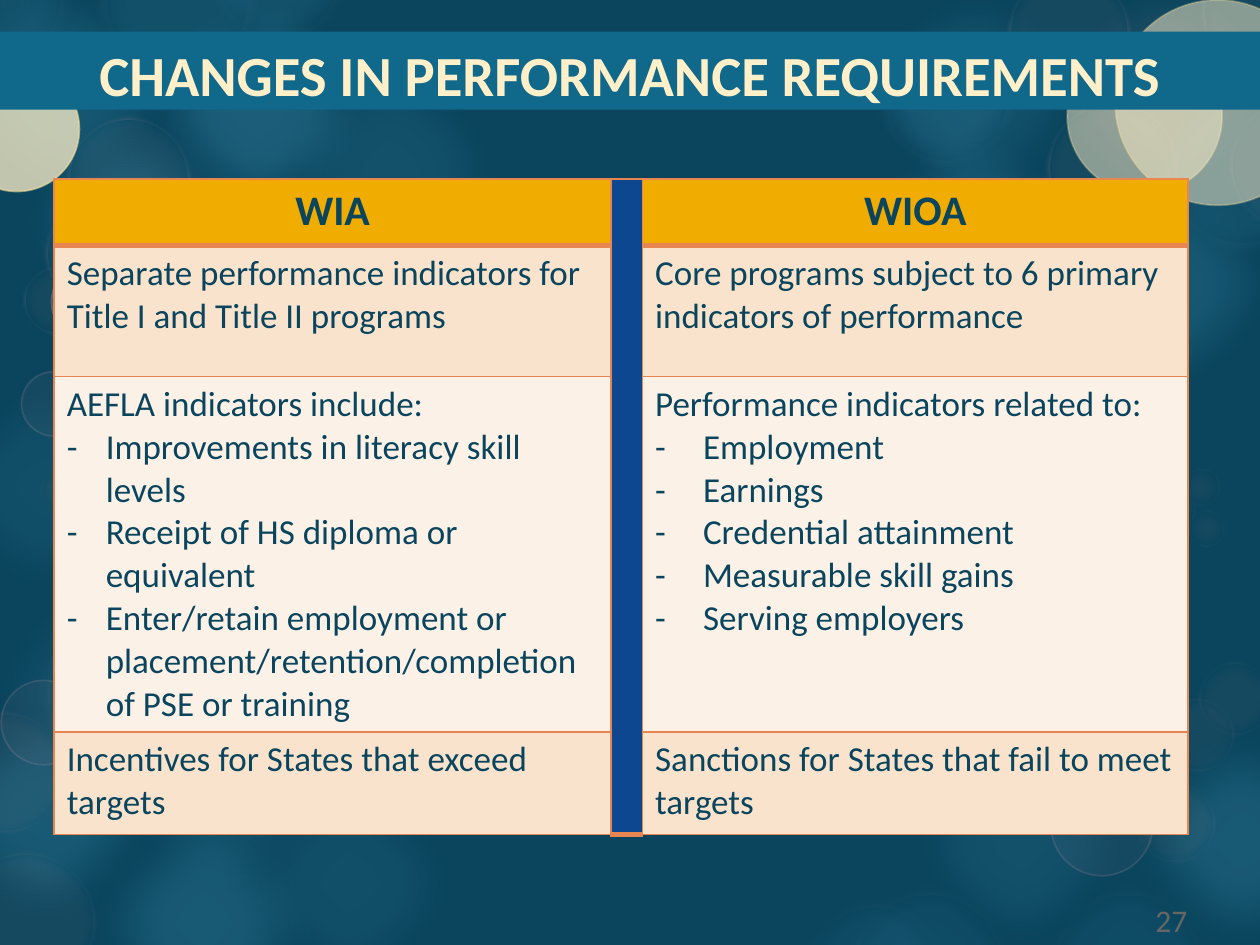
import pptx
import pptx.dml.color
import pptx.enum.shapes
import pptx.enum.text
import pptx.oxml
import pptx.oxml.ns
import pptx.util
from lxml import etree

Inches, Pt = pptx.util.Inches, pptx.util.Pt
ALIGN = pptx.enum.text.PP_ALIGN
qn = pptx.oxml.ns.qn

FONT = "Calibri"
COLORS = {
    "navy": "0A455D", "bar": "10688B", "cream": "FFF0C9", "gold": "F0AD00",
    "blue": "0C4790", "orange": "E88651", "band": "F9E3CC", "light": "FCF1E7",
    "gray": "666666", "sky": "65C4EB", "ice": "DEF2FB", "pink": "F0A7B1",
    "rim": "FFE193",
}

# Background circles: left, top, diameter, then fill opacity where it varies
BLOB = 2.09
BLOBS = [
    (-0.25, 4.42, BLOB, 8), (0.57, 1.2, BLOB, 10), (2.05, 0.31, BLOB, 10),
    (0.57, 6.27, BLOB, 16), (-0.55, -0.32, BLOB, 14), (1.01, -0.18, BLOB, 20),
    (0, 0.72, BLOB, 15), (6.69, -0.29, BLOB, 10), (8.2, 1.2, BLOB, 15),
    (8.81, 5.62, BLOB, 16), (7.29, 4.77, BLOB, 5), (-0.68, 5.41, BLOB, 16),
    (0.77, 5.24, BLOB, 8), (6.69, 0.86, BLOB, 15), (7.06, 5.62, BLOB, 10),
    (1.73, 5.96, BLOB, 8), (-0.69, 2.82, BLOB, 8), (6.75, 2.62, 1.33, 10),
]
HALOS_TOP = [
    (9.18, 0.65, 1.37), (6.94, 0.23, 1.14), (7.52, 1.59, 1.33),
    (7.89, 2.24, 1.14), (8.47, 2.91, 0.79), (0.75, -0.65, 1.31),
    (1.64, -0.75, 1.14), (-0.57, -0.58, 1.14),
]
HALOS_BOTTOM = [
    (0.3, 4.73, 1.53), (6.33, 7.1, 1.22), (6.7, 7.01, 1.35), (8.29, 7.01, 1.32),
]
RINGS_TOP = [
    (0.52, 0.92, 1), (0.35, 1.59, 0.85), (0.17, 2.1, 0.57), (7.99, -0.24, 0.99),
    (9.53, -0.4, 1), (9.75, 0.77, 1.09), (8.3, 0.8, 1.06),
]
RINGS_BOTTOM = [
    (-0.36, 6.75, 1.13), (-0.44, 5.64, 0.98), (7.63, 5.73, 0.81),
    (9, 6.2, 0.66), (8.83, 4.48, 0.61), (9.2, 5.53, 0.61), (9.5, 5.24, 0.61),
    (9.37, 3.7, 0.33), (9.18, 3.87, 0.33), (9.41, 4.03, 0.33), (0.3, 3.7, 0.39),
]
THIN_TOP = [(0.41, 2.06, 0.67), (8.17, 1.45, 0.67)]
THIN_BOTTOM = [
    (8.34, 6.14, 0.81), (8.2, 5.39, 0.81), (0.17, 2.95, 0.51),
    (0.52, 3.46, 0.5), (0.01, 5.4, 0.67),
]
MOONS = [(8.47, 0.31, 1.23), (-0.36, 0.53, 0.99), (8.85, 0, 1.63),
         (-0.36, 0.53, 0.99)]

# Table text: (left, right) per row; paragraphs after the first are bullets
ROWS = [
    (["WIA"], ["WIOA"]),
    (["Separate performance indicators for Title I and Title II programs"],
     ["Core programs subject to 6 primary indicators of performance"]),
    (["AEFLA indicators include:", "Improvements in literacy skill levels",
      "Receipt of HS diploma or equivalent",
      "Enter/retain employment or placement/retention/completion of PSE or training"],
     ["Performance indicators related to:", "Employment", "Earnings",
      "Credential attainment", "Measurable skill gains", "Serving employers"]),
    (["Incentives for States that exceed targets"],
     ["Sanctions for States that fail to meet targets"]),
]
COL_WIDTHS = [4.42, 0.25, 4.33]
ROW_HEIGHTS = [0.53, 1.04, 2.63, 0.81]
ROW_FILLS = ["gold", "band", "light", "band"]
INDENTS = [0.31, 0.38]


def rgb(name):
    return pptx.dml.color.RGBColor.from_string(COLORS[name])


def set_fill(fill, color, opacity=100):
    fill.solid()
    fill.fore_color.rgb = rgb(color)
    if opacity < 100:
        clr = fill._xPr.find(".//" + qn("a:srgbClr"))
        etree.SubElement(clr, qn("a:alpha"), val=str(opacity * 1000))


def style(p, size, color, bold=False):
    p.font.name, p.font.size, p.font.bold = FONT, Pt(size), bold
    p.font.color.rgb = rgb(color)


def add_circles(s, circles, color, opacity=10, rim=None, soft=0):
    """Draw circles; rim is (color, points, opacity), soft is in inches."""
    for x, y, d, *own in circles:
        sp = s.shapes.add_shape(pptx.enum.shapes.MSO_SHAPE.OVAL,
                                Inches(x), Inches(y), Inches(d), Inches(d))
        sp.shadow.inherit = False
        set_fill(sp.fill, color, own[0] if own else opacity)
        if rim:
            set_fill(sp.line.fill, rim[0], rim[2])
            sp.line.width = Pt(rim[1])
        else:
            sp.line.fill.background()
        if soft:
            effects = sp._element.spPr.find(qn("a:effectLst"))
            etree.SubElement(effects, qn("a:softEdge"), rad=str(Inches(soft)))


def add_background(s):
    set_fill(s.background.fill, "navy")
    add_circles(s, BLOBS, "sky", soft=0.35)
    add_circles(s, [(8.2, -0.32, BLOB)], "pink", soft=0.35)
    add_circles(s, HALOS_TOP, "sky", 10, ("ice", 14, 6), 0.18)
    add_circles(s, HALOS_BOTTOM, "sky", 6, ("ice", 14, 4), 0.18)
    add_circles(s, RINGS_TOP, "pink", 5, ("pink", 5, 30), 0.07)
    add_circles(s, RINGS_BOTTOM, "pink", 5, ("pink", 5, 15), 0.07)
    add_circles(s, THIN_TOP, "pink", 5, ("pink", 1, 30))
    add_circles(s, THIN_BOTTOM, "pink", 5, ("pink", 1, 15))
    add_circles(s, MOONS, "cream", 50, ("rim", 1, 30))


def set_title(s, text):
    sp = s.shapes.title
    sp.left, sp.top, sp.width, sp.height = 0, Inches(0.25), Inches(10), Inches(0.62)
    set_fill(sp.fill, "bar")
    tf = sp.text_frame
    tf.text = text
    tf.auto_size = pptx.enum.text.MSO_AUTO_SIZE.NONE
    tf.vertical_anchor = pptx.enum.text.MSO_ANCHOR.MIDDLE
    tf.margin_top, tf.margin_bottom = Inches(0.1), Inches(0.05)
    tf.paragraphs[0].alignment = ALIGN.CENTER
    style(tf.paragraphs[0], 32.4, "cream", True)
    # Keep the title bar in front of the background circles
    s.shapes._spTree.append(sp._element)


def set_borders(cell, bottom):
    tc_pr = cell._tc.get_or_add_tcPr()
    for side, width in (("L", 1), ("R", 1), ("T", 1), ("B", bottom)):
        ln = etree.SubElement(tc_pr, qn("a:ln" + side), w=str(Pt(width)))
        fill = etree.SubElement(ln, qn("a:solidFill"))
        etree.SubElement(fill, qn("a:srgbClr"), val=COLORS["orange"])


def add_bullet(p, indent):
    p_pr = p._p.get_or_add_pPr()
    p_pr.set("marL", str(Inches(indent)))
    p_pr.set("indent", str(-Inches(indent)))
    etree.SubElement(p_pr, qn("a:buFont"), typeface=FONT)
    etree.SubElement(p_pr, qn("a:buChar"), char="-")


def fill_cell(cell, lines, header, indent):
    tf = cell.text_frame
    tf.text = "\n".join(lines)
    for i, p in enumerate(tf.paragraphs):
        if i:
            add_bullet(p, indent)
        if header:
            p.alignment = ALIGN.CENTER
        style(p, 24 if header else 20, "navy", header)


def add_comparison(s):
    table = s.shapes.add_table(len(ROWS), len(COL_WIDTHS), Inches(0.43), Inches(1.42),
                               Inches(sum(COL_WIDTHS)), Inches(sum(ROW_HEIGHTS))).table
    for col, width in zip(table.columns, COL_WIDTHS):
        col.width = Inches(width)
    for r, texts in enumerate(ROWS):
        table.rows[r].height = Inches(ROW_HEIGHTS[r])
        for c in range(len(COL_WIDTHS)):
            cell = table.cell(r, c)
            set_borders(cell, 3 if r == 0 or c == 1 else 1)
            set_fill(cell.fill, "blue" if c == 1 else ROW_FILLS[r])
        for c, lines, indent in zip((0, 2), texts, INDENTS):
            fill_cell(table.cell(r, c), lines, r == 0, indent)
    # Blue divider down the middle
    table.cell(0, 1).merge(table.cell(len(ROWS) - 1, 1))


def add_page_number(s, number):
    tf = s.shapes.add_textbox(Inches(9.17), Inches(7.1), Inches(0.58), Inches(0.4)).text_frame
    tf.word_wrap = True
    tf.margin_left = tf.margin_right = 0
    tf.text = number
    style(tf.paragraphs[0], 18, "gray")


def main():
    prs = pptx.Presentation()
    prs.slide_width, prs.slide_height = Inches(10), Inches(7.5)
    s = prs.slides.add_slide(prs.slide_layouts[5])
    add_background(s)
    set_title(s, "CHANGES IN PERFORMANCE REQUIREMENTS")
    add_comparison(s)
    add_page_number(s, "27")
    prs.save("out.pptx")


if __name__ == "__main__":
    main()
